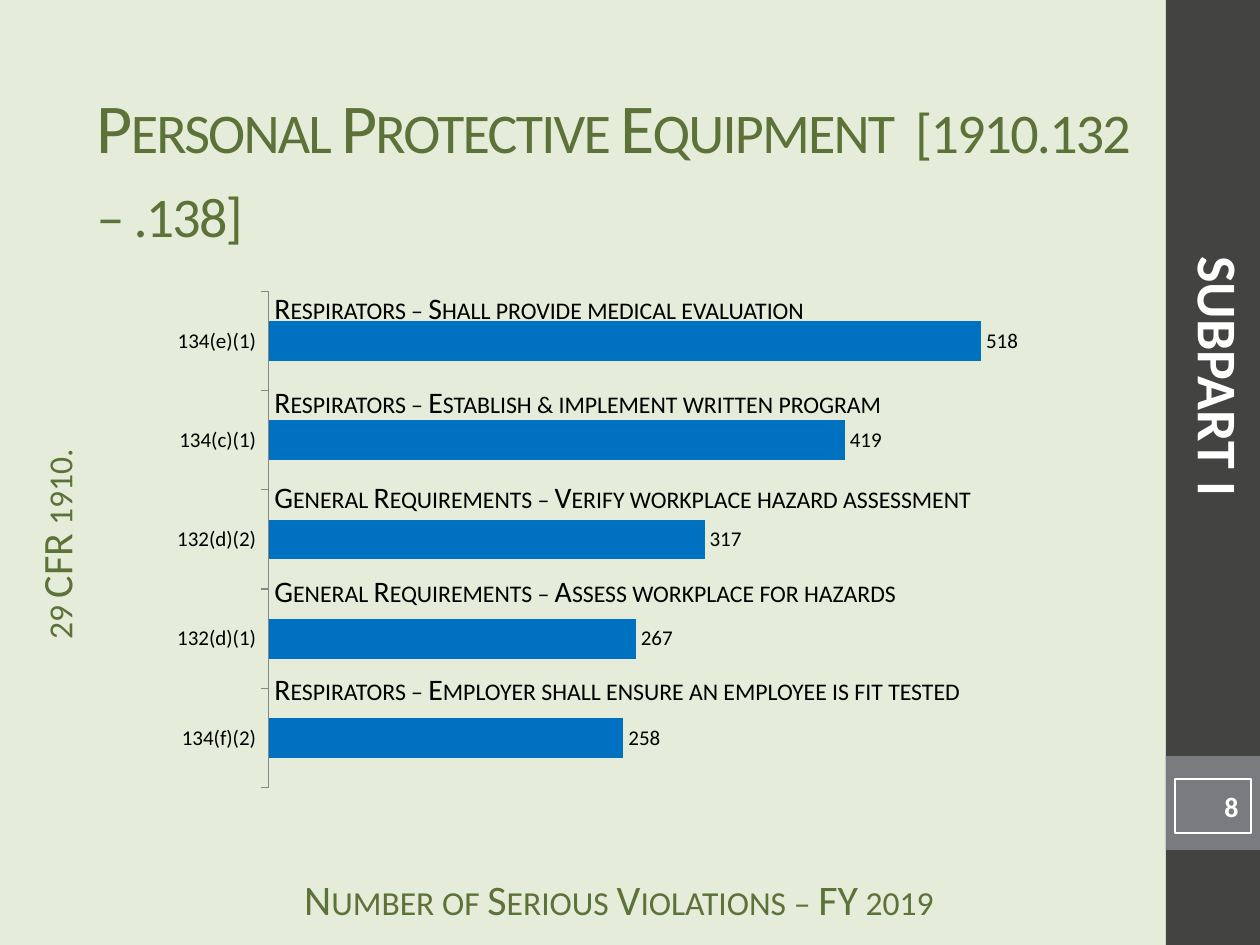
import dataclasses

import pptx
import pptx.chart.data
import pptx.dml.color
import pptx.enum.chart
import pptx.enum.shapes
import pptx.enum.text
import pptx.util

PX = 914400 / 126
ALIGN = pptx.enum.text.PP_ALIGN
ANCHOR = pptx.enum.text.MSO_ANCHOR


@dataclasses.dataclass(frozen=True)
class Theme:
    font: str = "Calibri"
    background: str = "E5ECD9"
    sidebar: str = "434342"
    sidebar_block: str = "797B7E"
    heading: str = "5D7238"
    bar: str = "0070C0"
    axis: str = "868686"
    dark: str = "000000"
    light: str = "FFFFFF"
    title_size: int = 40
    subpart_size: int = 32
    axis_title_size: int = 24
    bar_title_size: int = 17
    page_number_size: int = 16
    chart_size: int = 12


THEME = Theme()

VIOLATIONS = [
    ("134(e)(1)", 518, "Respirators – Shall provide medical evaluation", 284),
    ("134(c)(1)", 419, "Respirators – Establish & implement written program", 378),
    ("132(d)(2)", 317, "General Requirements – Verify workplace hazard assessment", 473),
    ("132(d)(1)", 267, "General Requirements – Assess workplace for hazards", 567),
    ("134(f)(2)", 258, "Respirators – Employer shall ensure an employee is fit tested", 665),
]


def px(length):
    return pptx.util.Emu(round(length * PX))


def color(name):
    return pptx.dml.color.RGBColor.from_string(name)


def place(shape, left, top, width, height):
    shape.left, shape.top = px(left), px(top)
    shape.width, shape.height = px(width), px(height)


def write(shape, text, *, size, ink, bold=False, small_caps=False, spacing=0,
          align=ALIGN.LEFT, anchor=ANCHOR.TOP, wrap=True):
    frame = shape.text_frame
    frame.word_wrap = wrap
    frame.auto_size = pptx.enum.text.MSO_AUTO_SIZE.NONE
    frame.vertical_anchor = anchor
    para = frame.paragraphs[0]
    para.alignment = align
    span = para.add_run()
    span.text = text
    span.font.name = THEME.font
    span.font.size = pptx.util.Pt(size)
    span.font.bold = bold
    span.font.color.rgb = color(ink)
    properties = span.font._element
    if small_caps:
        properties.set("cap", "small")
    if spacing:
        properties.set("spc", str(spacing * 100))


def add_label(page, text, area, rotation=0, **text_format):
    box = page.shapes.add_textbox(*map(px, area))
    box.rotation = rotation
    write(box, text, **text_format)
    return box


def add_axis_title(page, text, area, rotation=0):
    box = add_label(page, text, area, rotation, size=THEME.axis_title_size,
                    ink=THEME.heading, small_caps=True, align=ALIGN.CENTER)
    box.text_frame.margin_top = 0


def add_rectangle(page, area, fill=None, line=None):
    box = page.shapes.add_shape(
        pptx.enum.shapes.MSO_SHAPE.RECTANGLE, *map(px, area))
    box.shadow.inherit = False
    if fill:
        box.fill.solid()
        box.fill.fore_color.rgb = color(fill)
    else:
        box.fill.background()
    if line:
        box.line.color.rgb = color(line)
        box.line.width = pptx.util.Pt(1.5)
    else:
        box.line.fill.background()
    return box


def add_violations_chart(page, area):
    data = pptx.chart.data.CategoryChartData()
    rows = VIOLATIONS[::-1]
    data.categories = [row[0] for row in rows]
    data.add_series("Series 1", [row[1] for row in rows])
    chart = page.shapes.add_chart(
        pptx.enum.chart.XL_CHART_TYPE.BAR_CLUSTERED, *map(px, area), data).chart
    chart.has_legend = False
    chart.has_title = False
    chart.font.name = THEME.font
    chart.font.size = pptx.util.Pt(THEME.chart_size)
    chart.font.color.rgb = color(THEME.dark)

    values = chart.value_axis
    values.visible = False
    values.has_major_gridlines = False
    values.minimum_scale, values.maximum_scale = 0, 600
    categories = chart.category_axis
    categories.major_tick_mark = pptx.enum.chart.XL_TICK_MARK.OUTSIDE
    categories.format.line.color.rgb = color(THEME.axis)

    plot = chart.plots[0]
    plot.gap_width = 150
    plot.vary_by_categories = False
    fill = plot.series[0].format.fill
    fill.solid()
    fill.fore_color.rgb = color(THEME.bar)
    plot.has_data_labels = True
    labels = plot.data_labels
    labels.show_value = True
    labels.position = pptx.enum.chart.XL_LABEL_POSITION.OUTSIDE_END
    labels.font.size = pptx.util.Pt(THEME.chart_size)


def add_sidebar(page):
    add_rectangle(page, (1166, 0, 94, 945), fill=THEME.sidebar)
    add_rectangle(page, (1166, 756, 94, 94), fill=THEME.sidebar_block)
    number = add_rectangle(page, (1175, 779, 76, 54), line=THEME.light)
    write(number, "8", size=THEME.page_number_size, ink=THEME.light, bold=True,
          align=ALIGN.RIGHT, anchor=ANCHOR.MIDDLE)
    add_label(page, "SUBPART I", (843, 336, 753, 81), rotation=90,
              size=THEME.subpart_size, ink=THEME.light, bold=True,
              align=ALIGN.CENTER)


def main():
    deck = pptx.Presentation()
    deck.slide_width, deck.slide_height = px(1260), px(945)
    page = deck.slides.add_slide(deck.slide_layouts[5])
    page.background.fill.solid()
    page.background.fill.fore_color.rgb = color(THEME.background)

    add_sidebar(page)
    title = page.shapes.title
    place(title, 84, 73, 1079, 189)
    write(title, "Personal Protective Equipment  [1910.132 – .138]",
          size=THEME.title_size, ink=THEME.heading, small_caps=True,
          spacing=-1, anchor=ANCHOR.MIDDLE)
    add_axis_title(page, "Number of Serious Violations – FY 2019",
                   (262, 873, 714, 42))
    add_axis_title(page, "29 CFR 1910.", (-197, 508, 528, 73), rotation=270)
    add_violations_chart(page, (158, 281, 955, 517))
    for _, _, description, top in VIOLATIONS:
        add_label(page, description, (262, top, 880, 49),
                  size=THEME.bar_title_size, ink=THEME.dark, small_caps=True)
    deck.save("out.pptx")


if __name__ == "__main__":
    main()
